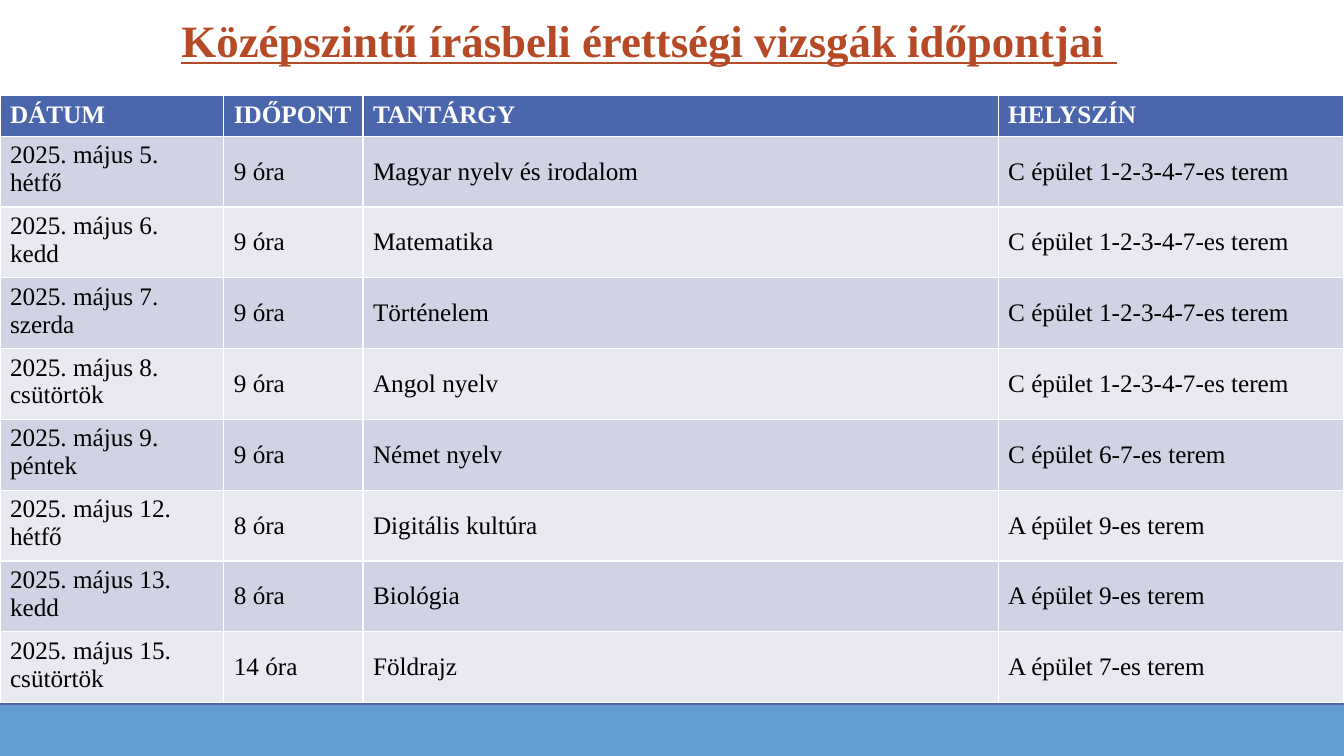
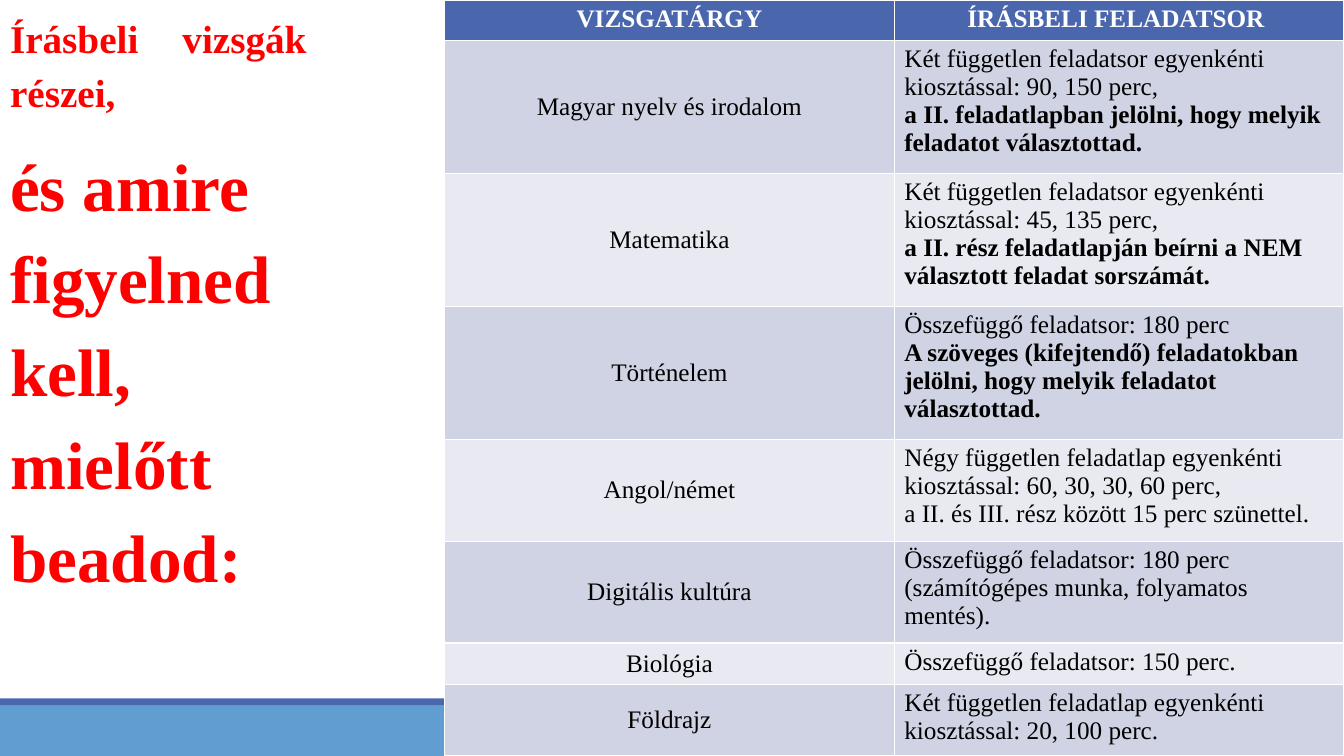
from pptx import Presentation
from pptx.dml.color import RGBColor
from pptx.enum.shapes import MSO_SHAPE
from pptx.enum.text import MSO_ANCHOR, MSO_AUTO_SIZE, PP_ALIGN
from pptx.util import Inches, Pt

FONT = "Times New Roman"
NAVY = RGBColor(0x4A, 0x66, 0xAC)
SKY = RGBColor(0x62, 0x9D, 0xD1)
RUST = RGBColor(0xB6, 0x49, 0x26)
RED = RGBColor(0xFF, 0x00, 0x00)
WHITE = RGBColor(0xFF, 0xFF, 0xFF)
BLACK = RGBColor(0x00, 0x00, 0x00)
ROW_FILLS = [RGBColor(0xE9, 0xEA, 0xF1), RGBColor(0xD0, 0xD3, 0xE3)]


def add_run(paragraph, text, size, color, bold):
    run = paragraph.add_run()
    run.text = text
    run.font.name = FONT
    run.font.size = Pt(size)
    run.font.bold = bold
    run.font.color.rgb = color
    return run


def fill_table(slide, left, top, widths, heights, rows, top_column, centred):
    """Add a table; a cell line starting with * is bold.

    Cells of top_column stay at the top, the other body cells sit in the middle.
    centred centres the header row and the first column.
    """
    table = slide.shapes.add_table(
        len(rows), len(widths), Inches(left), Inches(top),
        Inches(sum(widths)), Inches(sum(heights))).table
    for column, width in zip(table.columns, widths):
        column.width = Inches(width)
    for r, (row, height) in enumerate(zip(rows, heights)):
        table.rows[r].height = Inches(height)
        header = r == 0
        for c, content in enumerate(row):
            cell = table.cell(r, c)
            cell.fill.solid()
            cell.fill.fore_color.rgb = NAVY if header else ROW_FILLS[r % 2]
            if not header and c != top_column:
                cell.vertical_anchor = MSO_ANCHOR.MIDDLE
            for i, line in enumerate(content.split("\n")):
                frame = cell.text_frame
                paragraph = frame.add_paragraph() if i else frame.paragraphs[0]
                if centred and (header or c == 0):
                    paragraph.alignment = PP_ALIGN.CENTER
                add_run(paragraph, line.removeprefix("*"), 18,
                        WHITE if header else BLACK, header or line.startswith("*"))


prs = Presentation()
prs.slide_width = Inches(13.33)
prs.slide_height = Inches(7.5)
title_only = prs.slide_layouts[5]
dates_slide = prs.slides.add_slide(title_only)
parts_slide = prs.slides.add_slide(title_only)

# The footer bands live on the layout, behind everything on the slides.
for i, (top, height, color) in enumerate([(7, 0.5, SKY), (6.93, 0.07, NAVY)]):
    band = dates_slide.shapes.add_shape(
        MSO_SHAPE.RECTANGLE, 0, Inches(top), prs.slide_width, Inches(height))
    band.shadow.inherit = False
    band.fill.solid()
    band.fill.fore_color.rgb = color
    band.line.fill.background()
    band.element.nvSpPr.cNvPr.id = 20 + i
    title_only.shapes.element.insert(2 + i, band.element)

# Titles: box, wrap, and paragraphs of (text, size, alignment, space after)
titles = [
    (dates_slide, (1.7, 0, 9.56, 0.67), False, RUST, True, [
        ("Középszintű írásbeli érettségi vizsgák időpontjai ", 32, PP_ALIGN.JUSTIFY, 10),
    ]),
    (parts_slide, (0, 0.02, 3.14, 5.92), True, RED, False, [
        ("Írásbeli vizsgák részei,", 28, PP_ALIGN.JUSTIFY, 12),
        ("és amire figyelned kell, mielőtt beadod:", 48, PP_ALIGN.LEFT, 12),
    ]),
]
for slide, box, wrap, color, underline, lines in titles:
    title = slide.shapes.title
    title.left, title.top, title.width, title.height = map(Inches, box)
    frame = title.text_frame
    frame.word_wrap = wrap
    frame.auto_size = MSO_AUTO_SIZE.SHAPE_TO_FIT_TEXT
    frame.vertical_anchor = MSO_ANCHOR.TOP
    for i, (text, size, alignment, space_after) in enumerate(lines):
        paragraph = frame.add_paragraph() if i else frame.paragraphs[0]
        paragraph.alignment = alignment
        paragraph.line_spacing = 1.15
        paragraph.space_after = Pt(space_after)
        add_run(paragraph, text, size, color, True).font.underline = underline

large_rooms = "C épület 1-2-3-4-7-es terem"
exam_dates = [
    ("DÁTUM", "IDŐPONT", "TANTÁRGY", "HELYSZÍN"),
    ("2025. május 5.\nhétfő", "9 óra", "Magyar nyelv és irodalom", large_rooms),
    ("2025. május 6.\nkedd", "9 óra", "Matematika", large_rooms),
    ("2025. május 7.\nszerda", "9 óra", "Történelem", large_rooms),
    ("2025. május 8.\ncsütörtök", "9 óra", "Angol nyelv", large_rooms),
    ("2025. május 9.\npéntek", "9 óra", "Német nyelv", "C épület 6-7-es terem"),
    ("2025. május 12.\nhétfő", "8 óra", "Digitális kultúra", "A épület 9-es terem"),
    ("2025. május 13.\nkedd", "8 óra", "Biológia", "A épület 9-es terem"),
    ("2025. május 15.\ncsütörtök", "14 óra", "Földrajz", "A épület 7-es terem"),
]
fill_table(dates_slide, 0, 0.95, [2.22, 1.38, 6.3, 3.43], [0.39] + [5.62 / 8] * 8,
           exam_dates, top_column=0, centred=False)

exam_parts = [
    ("VIZSGATÁRGY", "ÍRÁSBELI FELADATSOR "),
    ("Magyar nyelv és irodalom",
     "Két független feladatsor egyenkénti kiosztással: 90, 150 perc,\n"
     "*a II. feladatlapban jelölni, hogy melyik feladatot választottad."),
    ("Matematika",
     "Két független feladatsor egyenkénti kiosztással: 45, 135 perc,\n"
     "*a II. rész feladatlapján beírni a NEM választott feladat sorszámát."),
    ("Történelem",
     "Összefüggő feladatsor: 180 perc\n"
     "*A szöveges (kifejtendő) feladatokban jelölni, hogy melyik feladatot választottad."),
    ("Angol/német",
     "Négy független feladatlap egyenkénti kiosztással: 60, 30, 30, 60 perc,\n"
     "a II. és III. rész között 15 perc szünettel."),
    ("Digitális kultúra",
     "Összefüggő feladatsor: 180 perc (számítógépes munka, folyamatos mentés)."),
    ("Biológia", "Összefüggő feladatsor: 150 perc."),
    ("Földrajz", "Két független feladatlap egyenkénti kiosztással: 20, 100 perc."),
]
fill_table(parts_slide, 4.41, 0, [4.46, 4.46],
           [0.4, 1.32, 1.32, 1.32, 1.01, 1.01, 0.41, 0.71],
           exam_parts, top_column=1, centred=True)

prs.save("out.pptx")
